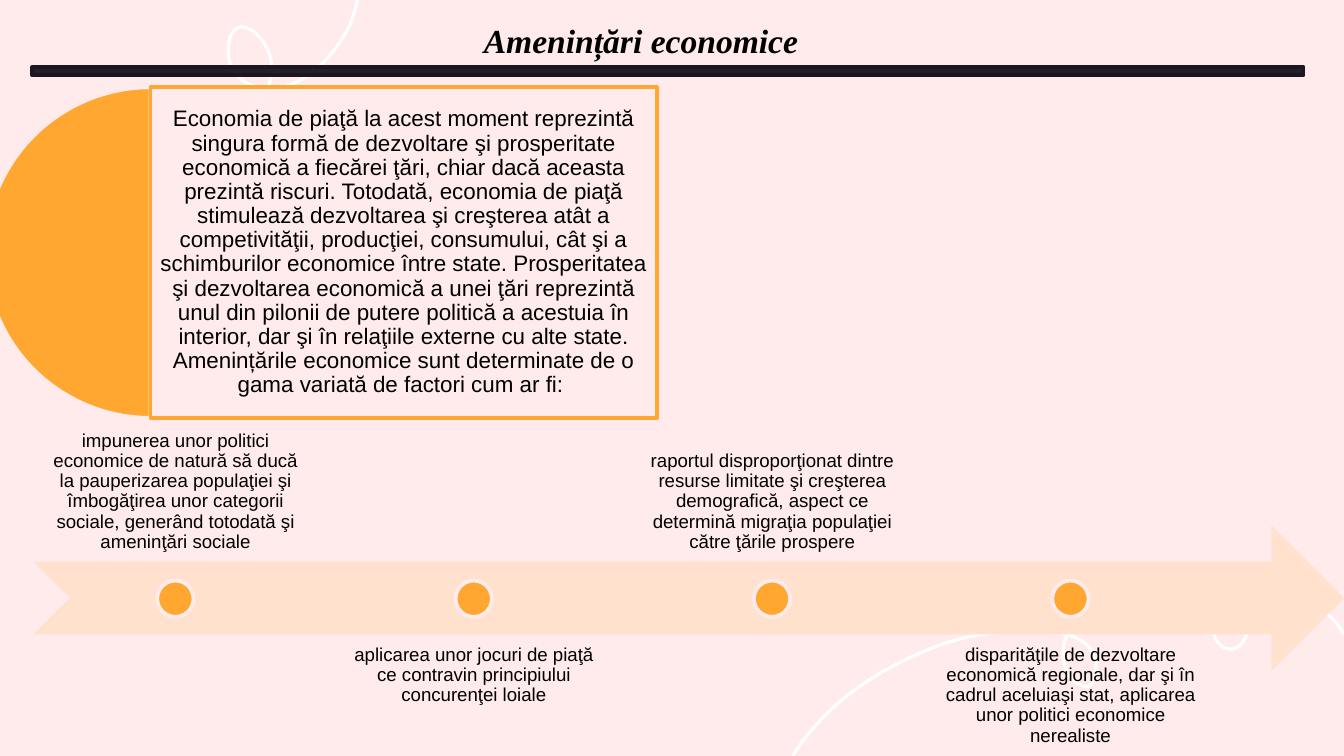
import pptx
import pptx.util
import pptx.dml.color
import pptx.enum.shapes
import pptx.enum.text
import pptx.oxml.ns
import lxml.etree

Inches = pptx.util.Inches
Pt = pptx.util.Pt
RGB = pptx.dml.color.RGBColor.from_string
SHAPE = pptx.enum.shapes.MSO_SHAPE
ANCHOR = pptx.enum.text.MSO_ANCHOR
ALIGN = pptx.enum.text.PP_ALIGN

COLORS = {
    "background": "FFEBEB",
    "swirl": "FFFFFF",
    "bar": "241F29",
    "bar_edge": "1B171E",
    "accent": "FFA731",
    "arrow": "FFE1CE",
    "text": "000000",
}

deck = pptx.Presentation()
deck.slide_width = Inches(10)
deck.slide_height = Inches(10 * 9 / 16)
slide = deck.slides.add_slide(deck.slide_layouts[5])
slide.background.fill.solid()
slide.background.fill.fore_color.rgb = RGB(COLORS["background"])


def add_figure(kind, left, top, width, height, fill, edge=None):
    figure = slide.shapes.add_shape(
        kind, Inches(left), Inches(top), Inches(width), Inches(height))
    figure.shadow.inherit = False
    figure.fill.solid()
    figure.fill.fore_color.rgb = RGB(COLORS[fill])
    if edge:
        figure.line.color.rgb = RGB(COLORS[edge])
        figure.line.width = Pt(2)
    else:
        figure.line.fill.background()
    return figure


def write_centered(holder, text, size, anchor, inset):
    frame = holder.text_frame
    frame.word_wrap = True
    frame.vertical_anchor = anchor
    frame.margin_left = frame.margin_right = Inches(inset)
    frame.margin_top = frame.margin_bottom = Inches(inset)
    frame.text = text
    paragraph = frame.paragraphs[0]
    paragraph.alignment = ALIGN.CENTER
    paragraph.line_spacing = 0.9
    font = paragraph.runs[0].font
    font.name = "Arial"
    font.size = Pt(size)
    font.color.rgb = RGB(COLORS["text"])


swirls = [
    ((2.66, 0), [
        ((2.64, 0.08), (2.62, 0.16), (2.58, 0.23)),
        ((2.47, 0.43), (2.26, 0.66), (2, 0.66)),
        ((1.82, 0.66), (1.68, 0.53), (1.7, 0.35)),
        ((1.7, 0.29), (1.73, 0.2), (1.8, 0.2)),
        ((1.9, 0.2), (2.1, 0.4), (1.99, 0.66)),
        ((1.94, 0.77), (1.87, 0.86), (1.77, 0.92)),
    ]),
    ((5.9, 5.62), [
        ((6.14, 5.25), (6.47, 5.02), (6.87, 4.85)),
        ((7.2, 4.7), (7.55, 4.67), (7.94, 4.72)),
        ((8.03, 4.75), (8.12, 4.8), (8.15, 4.9)),
        ((8.17, 5), (8.14, 5.11), (8.08, 5.11)),
        ((7.92, 5.08), (7.87, 4.87), (7.94, 4.72)),
        ((8, 4.58), (8.3, 4.31), (8.69, 4.31)),
        ((8.85, 4.32), (9.03, 4.36), (9.17, 4.46)),
        ((9.26, 4.53), (9.3, 4.62), (9.28, 4.7)),
        ((9.25, 4.85), (9.1, 4.88), (9.04, 4.74)),
        ((9, 4.6), (9.07, 4.5), (9.17, 4.45)),
        ((9.46, 4.3), (9.85, 4.45), (10, 4.72)),
    ]),
]
STEPS = 12
for start, curves in swirls:
    points = []
    begin = start
    for first, second, end in curves:
        for step in range(1, STEPS + 1):
            t = step / STEPS
            points.append(tuple(
                Inches((1 - t) ** 3 * a + 3 * (1 - t) ** 2 * t * b
                       + 3 * (1 - t) * t ** 2 * c + t ** 3 * d)
                for a, b, c, d in zip(begin, first, second, end)))
        begin = end
    builder = slide.shapes.build_freeform(Inches(start[0]), Inches(start[1]))
    builder.add_line_segments(points, close=False)
    swirl = builder.convert_to_shape()
    swirl.shadow.inherit = False
    swirl.fill.background()
    swirl.line.color.rgb = RGB(COLORS["swirl"])
    swirl.line.width = Pt(1.75)

add_figure(SHAPE.RECTANGLE, 0.24, 0.5, 9.46, 0.06, "bar", "bar_edge")

title = slide.shapes.title
title.left, title.top = Inches(3.5), Inches(0.1)
title.width, title.height = Inches(4.25), Inches(0.4)
title.text_frame.text = "Amenințări economice"
title.text_frame.vertical_anchor = ANCHOR.MIDDLE
heading = title.text_frame.paragraphs[0]
heading.alignment = ALIGN.LEFT
heading_font = heading.runs[0].font
heading_font.name = "Times New Roman"
heading_font.size = Pt(18)
heading_font.bold = True
heading_font.italic = True
heading_font.color.rgb = RGB(COLORS["text"])

half_disc = add_figure(SHAPE.PIE, -0.11, 0.65, 2.46, 2.46, "accent", "background")
half_disc.adjustments[0] = 54
half_disc.adjustments[1] = 162

intro = add_figure(SHAPE.RECTANGLE, 1.12, 0.65, 3.77, 2.46, "background", "accent")
intro_color = intro.fill._xPr.find(".//" + pptx.oxml.ns.qn("a:srgbClr"))
lxml.etree.SubElement(intro_color, pptx.oxml.ns.qn("a:alpha"), val="90000")
write_centered(
    intro,
    "Economia de piaţă la acest moment reprezintă singura formă de dezvoltare "
    "şi prosperitate economică a fiecărei ţări, chiar dacă aceasta prezintă "
    "riscuri. Totodată, economia de piaţă stimulează dezvoltarea şi creşterea "
    "atât a competivităţii, producţiei, consumului, cât şi a schimburilor "
    "economice între state. Prosperitatea şi dezvoltarea economică a unei ţări "
    "reprezintă unul din pilonii de putere politică a acestuia în interior, dar "
    "şi în relaţiile externe cu alte state. Amenințările economice sunt "
    "determinate de o gama variată de factori cum ar fi: ",
    12, ANCHOR.MIDDLE, 0.05)

add_figure(SHAPE.NOTCHED_RIGHT_ARROW, 0.25, 3.91, 9.75, 1.08, "arrow")

factors = [
    "impunerea unor politici economice de natură să ducă la pauperizarea "
    "populaţiei şi îmbogăţirea unor categorii sociale, generând totodată şi "
    "ameninţări sociale",
    "aplicarea unor jocuri de piaţă ce contravin principiului concurenţei loiale",
    "raportul disproporţionat dintre resurse limitate şi creşterea demografică, "
    "aspect ce determină migraţia populaţiei către ţările prospere",
    "disparităţile de dezvoltare economică regionale, dar şi în cadrul aceluiaşi "
    "stat, aplicarea unor politici economice nerealiste",
]
FACTOR_WIDTH, FACTOR_PITCH, DOT = 2.11, 2.22, 0.27
for index, factor in enumerate(factors):
    left = 0.25 + index * FACTOR_PITCH
    above = index % 2 == 0
    label = slide.shapes.add_textbox(
        Inches(left), Inches(3.11 if above else 4.72),
        Inches(FACTOR_WIDTH), Inches(1.08))
    write_centered(label, factor, 10, ANCHOR.BOTTOM if above else ANCHOR.TOP, 0.08)
    add_figure(SHAPE.OVAL, left + (FACTOR_WIDTH - DOT) / 2, 4.32, DOT, DOT,
               "accent", "background")

deck.save("out.pptx")
